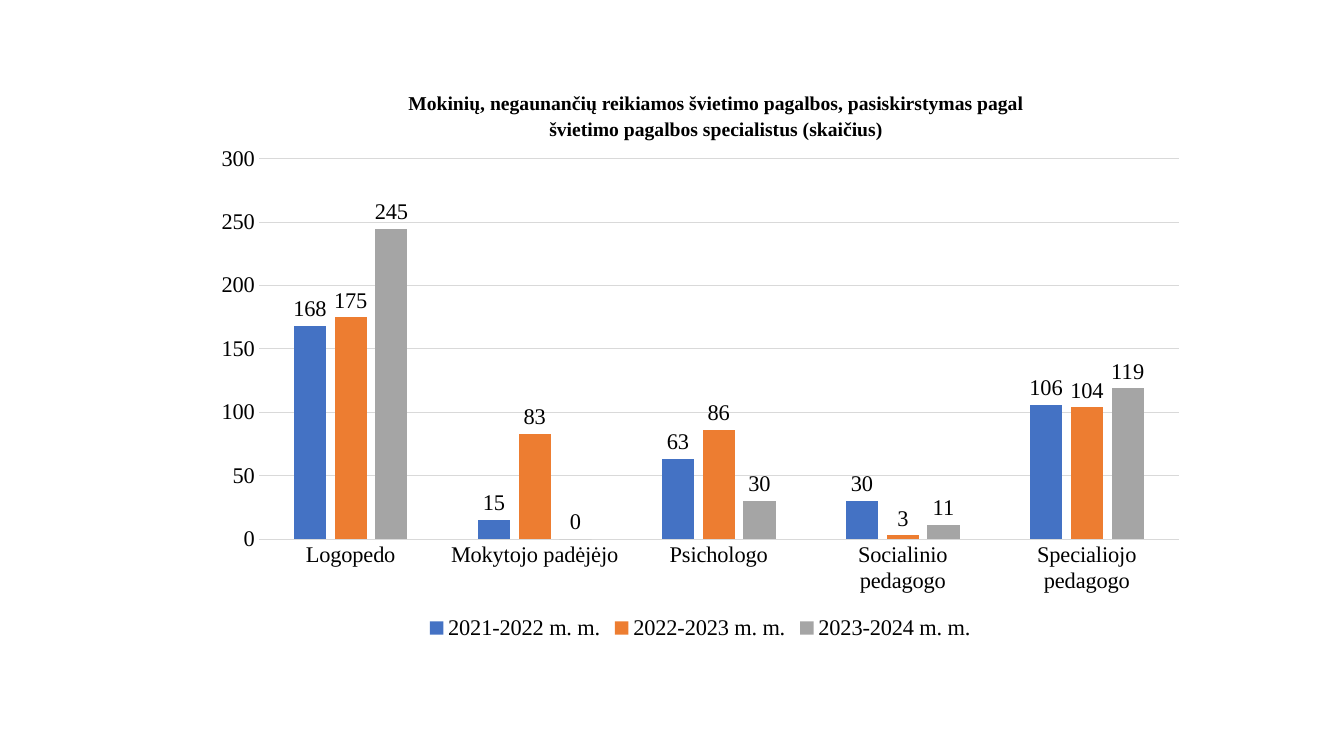
from pptx import Presentation
from pptx.chart.data import CategoryChartData
from pptx.dml.color import RGBColor
from pptx.enum.chart import XL_CHART_TYPE, XL_LABEL_POSITION, XL_LEGEND_POSITION, XL_TICK_MARK
from pptx.enum.text import MSO_AUTO_SIZE, PP_ALIGN
from pptx.util import Inches, Pt

FONT = "Times New Roman"
COLORS = {"text": "000000", "grid": "D9D9D9"}
TITLE = ("Mokinių, negaunančių reikiamos švietimo pagalbos, pasiskirstymas "
         "pagal švietimo pagalbos specialistus (skaičius)")
SPECIALISTS = ["Logopedo", "Mokytojo padėjėjo", "Psichologo",
               "Socialinio pedagogo", "Specialiojo pedagogo"]
SCHOOL_YEARS = [
    ("2021-2022 m. m.", "4472C4", [168, 15, 63, 30, 106]),
    ("2022-2023 m. m.", "ED7D31", [175, 83, 86, 3, 104]),
    ("2023-2024 m. m.", "A5A5A5", [245, 0, 30, 11, 119]),
]


def set_font(font, size, bold=False):
    font.name = FONT
    font.size = Pt(size)
    font.bold = bold
    font.color.rgb = RGBColor.from_string(COLORS["text"])


def set_line(line):
    line.color.rgb = RGBColor.from_string(COLORS["grid"])
    line.width = Pt(0.75)


def style_axes(chart):
    for axis in (chart.category_axis, chart.value_axis):
        axis.major_tick_mark = axis.minor_tick_mark = XL_TICK_MARK.NONE
        set_font(axis.tick_labels.font, 16)
    chart.category_axis.has_major_gridlines = False
    set_line(chart.category_axis.format.line)
    chart.value_axis.has_major_gridlines = True
    set_line(chart.value_axis.major_gridlines.format.line)
    chart.value_axis.format.line.fill.background()
    chart.value_axis.minimum_scale = 0
    chart.value_axis.maximum_scale = 300
    chart.value_axis.major_unit = 50


def style_series(series, color):
    series.format.fill.solid()
    series.format.fill.fore_color.rgb = RGBColor.from_string(color)
    series.invert_if_negative = False
    labels = series.data_labels
    labels.show_value = True
    labels.position = XL_LABEL_POSITION.OUTSIDE_END
    set_font(labels.font, 16)


def add_column_chart(page, left, top, width, height):
    data = CategoryChartData()
    data.categories = SPECIALISTS
    for name, _, counts in SCHOOL_YEARS:
        data.add_series(name, counts)
    chart = page.shapes.add_chart(XL_CHART_TYPE.COLUMN_CLUSTERED,
                                  left, top, width, height, data).chart
    chart.has_title = False
    set_font(chart.font, 16)
    chart.has_legend = True
    chart.legend.position = XL_LEGEND_POSITION.BOTTOM
    chart.legend.include_in_layout = False
    set_font(chart.legend.font, 16)
    style_axes(chart)
    plot = chart.plots[0]
    plot.vary_by_categories = False
    plot.gap_width = 219
    plot.overlap = -27
    for series, (_, color, _) in zip(plot.series, SCHOOL_YEARS):
        style_series(series, color)


def add_title(page, left, top, width, height):
    frame = page.shapes.add_textbox(left, top, width, height).text_frame
    frame.word_wrap = True
    frame.auto_size = MSO_AUTO_SIZE.SHAPE_TO_FIT_TEXT
    para = frame.paragraphs[0]
    para.text = TITLE
    para.alignment = PP_ALIGN.CENTER
    para.line_spacing = 1.07
    para.space_after = Pt(8)
    set_font(para.font, 14, bold=True)


def main():
    deck = Presentation()
    deck.slide_width = Inches(13.33)
    deck.slide_height = Inches(7.5)
    page = deck.slides.add_slide(deck.slide_layouts[6])
    wide, high = deck.slide_width, deck.slide_height
    add_column_chart(page, int(wide * 0.15), int(high * 0.18),
                     Inches(9.89), Inches(5.05))
    add_title(page, Inches(3.77), Inches(0.84), int(wide * 0.5), Inches(0.59))
    deck.save("out.pptx")


if __name__ == "__main__":
    main()
